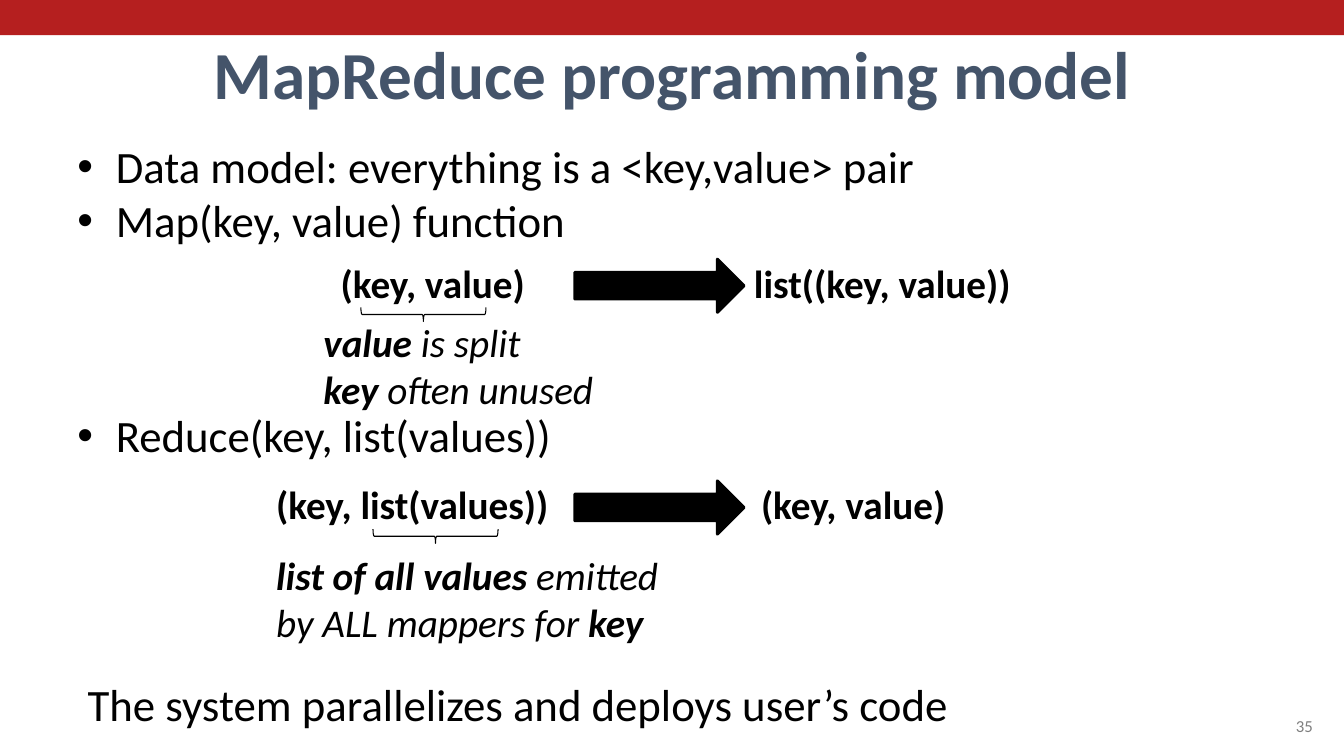
from pptx import Presentation
from pptx.dml.color import RGBColor
from pptx.enum.shapes import MSO_SHAPE as SHAPE
from pptx.enum.text import MSO_ANCHOR as ANCHOR, MSO_AUTO_SIZE as AUTO, PP_ALIGN as ALIGN
from pptx.oxml.ns import qn
from pptx.util import Inches, Pt
from lxml import etree

BLACK = RGBColor(0x00, 0x00, 0x00)
RED = RGBColor(0xB5, 0x1F, 0x1F)
SLATE = RGBColor(0x44, 0x54, 0x6A)
GRAY = RGBColor(0x7F, 0x7F, 0x7F)

LINE = 38.4  # body line pitch in points


class SlideBuilder:
    """Holds the text style and the slide being filled."""

    font = "Calibri"
    body_size = 32
    label_size = 28

    def __init__(self, prs):
        self.s = prs.slides.add_slide(prs.slide_layouts[5])

    def run(self, p, text, size, color=BLACK, bold=False, italic=False):
        r = p.add_run()
        r.text = text
        f = r.font
        f.name, f.size, f.bold, f.italic = self.font, Pt(size), bold, italic
        f.color.rgb = color

    def title(self, text, *at):
        sp = self.s.shapes.title
        sp.left, sp.top, sp.width, sp.height = map(Inches, at)
        tf = sp.text_frame
        tf.auto_size = AUTO.NONE
        tf.vertical_anchor = ANCHOR.BOTTOM
        p = tf.paragraphs[0]
        p.alignment = ALIGN.CENTER
        self.run(p, text, 48, SLATE, bold=True)

    def box(self, *at, wrap=True):
        tf = self.s.shapes.add_textbox(*map(Inches, at)).text_frame
        tf.word_wrap = wrap
        return tf

    def body(self, items, *at):
        """Each item is its text, whether it has a bullet, and the lines left free above it."""
        tf = self.box(*at)
        for i, (text, bullet, free_lines) in enumerate(items):
            p = tf.paragraphs[0] if i == 0 else tf.add_paragraph()
            pPr = p._p.get_or_add_pPr()
            pPr.set("marL", str(Inches(0.38 if bullet else 0.1)))
            pPr.set("indent", str(Inches(-0.38 if bullet else 0)))
            p.line_spacing = Pt(LINE)
            if free_lines:
                p.space_before = Pt(free_lines * LINE)
            if bullet:
                etree.SubElement(pPr, qn("a:buFont"), typeface="Arial")
                etree.SubElement(pPr, qn("a:buChar"), char="•")
            self.run(p, text, self.body_size)

    def label(self, text, *at):
        tf = self.box(*at, wrap=False)
        self.run(tf.paragraphs[0], text, self.label_size, bold=True)

    def remark(self, lines, *at):
        """Italic lines, each a list of (text, bold) pairs."""
        tf = self.box(*at, wrap=False)
        for i, line in enumerate(lines):
            p = tf.paragraphs[0] if i == 0 else tf.add_paragraph()
            for text, bold in line:
                self.run(p, text, self.label_size, bold=bold, italic=True)

    def shape(self, kind, at, fill=None, line=None):
        sp = self.s.shapes.add_shape(kind, *map(Inches, at))
        sp.shadow.inherit = False
        if fill is None:
            sp.fill.background()
        else:
            sp.fill.solid()
            sp.fill.fore_color.rgb = fill
        if line is None:
            sp.line.fill.background()
        else:
            sp.line.color.rgb = BLACK
            sp.line.width = Pt(line)
        return sp

    def arrow(self, top):
        self.shape(SHAPE.RIGHT_ARROW, (5.7, top, 1.68, 0.53), BLACK, 2)

    def brace(self, left, top):
        sp = self.shape(SHAPE.LEFT_BRACE, (left, top, 0.14, 1.24), line=0.75)
        sp.rotation = 270

    def number(self, text, *at):
        tf = self.box(*at)
        tf.vertical_anchor = ANCHOR.BOTTOM
        p = tf.paragraphs[0]
        p.alignment = ALIGN.RIGHT
        self.run(p, text, 12, GRAY)


def main():
    prs = Presentation()
    prs.slide_width, prs.slide_height = Inches(13.33), Inches(7.5)
    b = SlideBuilder(prs)
    b.shape(SHAPE.RECTANGLE, (0, 0, 13.33, 0.35), RED)
    b.title("MapReduce programming model", 0.67, 0.3, 12, 0.87)
    b.body([
        ("Data model: everything is a <key,value> pair", True, 0),
        ("Map(key, value) function", True, 0),
        ("Reduce(key, list(values))", True, 3),
        ("The system parallelizes and deploys user’s code", False, 4),
    ], 0.67, 1.33, 12, 5.37)
    b.number("35", 9.56, 6.83, 3.56, 0.52)

    steps = [
        (2.52, ("(key, value)", 3.28, 2.1), ("list((key, value))", 7.38, 2.83), 4.13),
        (4.72, ("(key, list(values))", 2.64, 2.98), ("(key, value)", 7.45, 2.1), 4.25),
    ]
    for top, source, result, brace_left in steps:
        for text, left, width in (source, result):
            b.label(text, left, top, width, 0.57)
        b.arrow(top + 0.05)
        b.brace(brace_left, top - 0.02)

    b.remark([
        [("value", True), (" is split", False)],
        [("key", True), (" often unused", False)],
    ], 3.11, 3.11, 2.99, 1.04)
    b.remark([
        [("list of all values ", True), ("emitted", False)],
        [("by ALL mappers for ", False), ("key", True)],
    ], 2.64, 5.42, 4.07, 1.04)
    prs.save("out.pptx")


if __name__ == "__main__":
    main()
